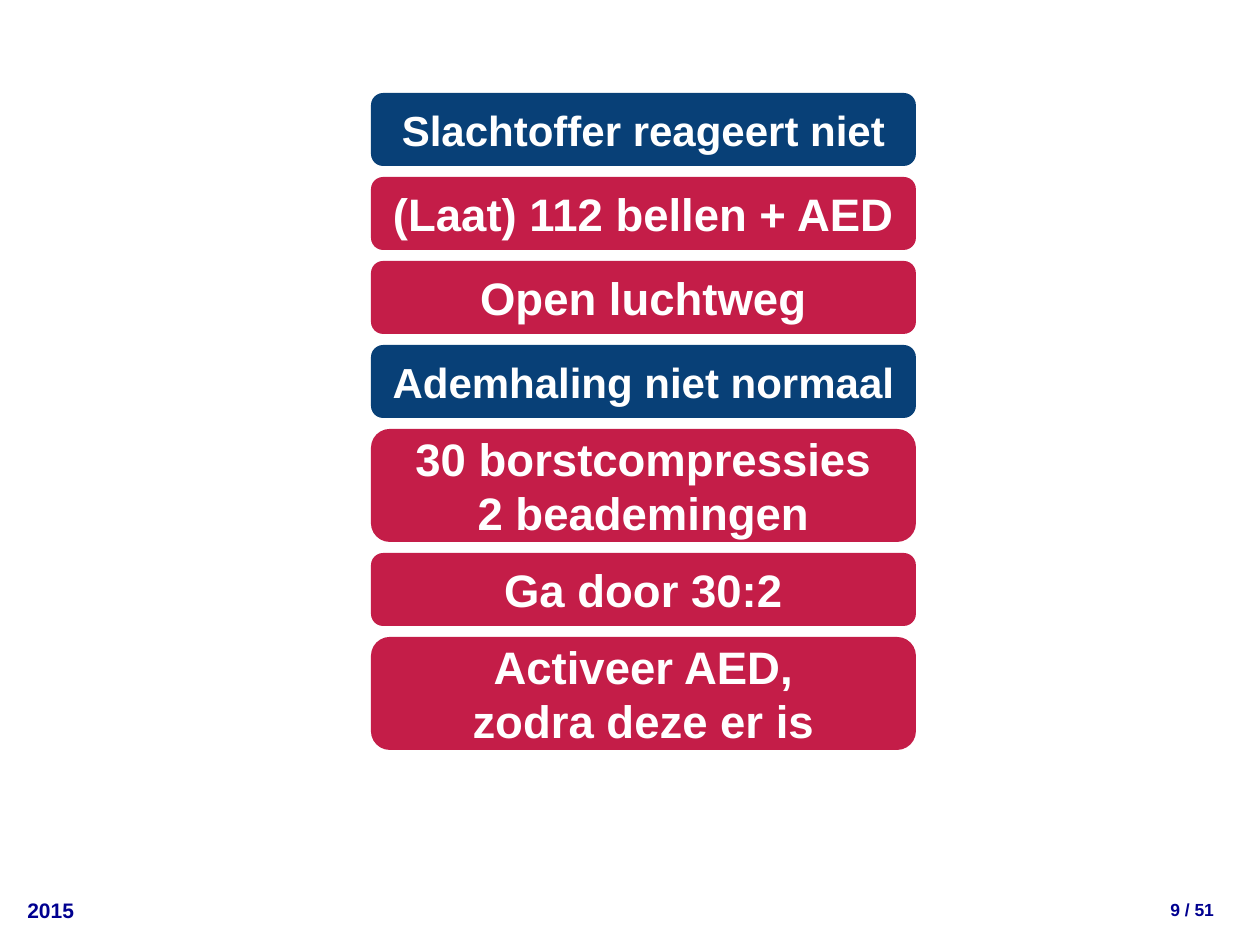
"""Build the slide with the resuscitation steps as a stacked column of boxes."""
from pptx import Presentation
from pptx.dml.color import RGBColor
from pptx.enum.shapes import MSO_SHAPE
from pptx.enum.text import MSO_ANCHOR, PP_ALIGN
from pptx.util import Emu, Pt

PX = 914400 // 126
ROUNDED = MSO_SHAPE.ROUNDED_RECTANGLE
MIDDLE = MSO_ANCHOR.MIDDLE
LEFT, CENTER = PP_ALIGN.LEFT, PP_ALIGN.CENTER

NAVY = RGBColor(0x08, 0x40, 0x77)
CRIMSON = RGBColor(0xC4, 0x1D, 0x48)
WHITE = RGBColor(0xFF, 0xFF, 0xFF)
FOOTER_BLUE = RGBColor(0x00, 0x00, 0x90)

COLUMN_LEFT, COLUMN_TOP, COLUMN_WIDTH = 371, 93, 545
LINE_HEIGHTS = {1: 73, 2: 113}
GAP = 11
CHECK = (NAVY, 24)
ACTION = (CRIMSON, 26)
STEPS = [
    (CHECK, ["Slachtoffer reageert niet"]),
    (ACTION, ["(Laat) 112 bellen + AED"]),
    (ACTION, ["Open luchtweg"]),
    (CHECK, ["Ademhaling niet normaal"]),
    (ACTION, ["30 borstcompressies", "2 beademingen"]),
    (ACTION, ["Ga door 30:2"]),
    (ACTION, ["Activeer AED,", "zodra deze er is"]),
]


class SlideBuilder:
    """Hold the font and the current slide, and add its elements."""

    def __init__(self, slide, font_name="Arial"):
        self.slide = slide
        self.font_name = font_name

    def set_text(self, shape, lines, size, color, alignment):
        """Fill a shape with bold paragraphs."""
        frame = shape.text_frame
        frame.word_wrap = True
        frame.vertical_anchor = MIDDLE
        frame.text = "\n".join(lines)
        for paragraph in frame.paragraphs:
            paragraph.alignment = alignment
            font = paragraph.font
            font.name = self.font_name
            font.size = Pt(size)
            font.bold = True
            font.color.rgb = color

    def step(self, left, top, width, height, lines, fill, size):
        """Add a rounded box with centred white text."""
        box = (Emu(value * PX) for value in (left, top, width, height))
        shape = self.slide.shapes.add_shape(ROUNDED, *box)
        shape.shadow.inherit = False
        shape.fill.solid()
        shape.fill.fore_color.rgb = fill
        shape.line.fill.background()
        self.set_text(shape, lines, size, WHITE, CENTER)

    def footer(self, left, top, width, height, text, size):
        """Add a small footer text."""
        box = (Emu(value * PX) for value in (left, top, width, height))
        shape = self.slide.shapes.add_textbox(*box)
        self.set_text(shape, [text], size, FOOTER_BLUE, LEFT)


def main():
    """Create and save the presentation."""
    presentation = Presentation()
    presentation.slide_width = Emu(1260 * PX)
    presentation.slide_height = Emu(945 * PX)
    slide = presentation.slides.add_slide(presentation.slide_layouts[6])
    builder = SlideBuilder(slide)

    builder.footer(15, 891, 87, 38, "2015", 12)
    builder.footer(1158, 893, 93, 34, "9 / 51", 10)

    top = COLUMN_TOP
    for (fill, size), lines in STEPS:
        height = LINE_HEIGHTS[len(lines)]
        builder.step(COLUMN_LEFT, top, COLUMN_WIDTH, height, lines, fill, size)
        top += height + GAP

    presentation.save("out.pptx")


if __name__ == "__main__":
    main()
